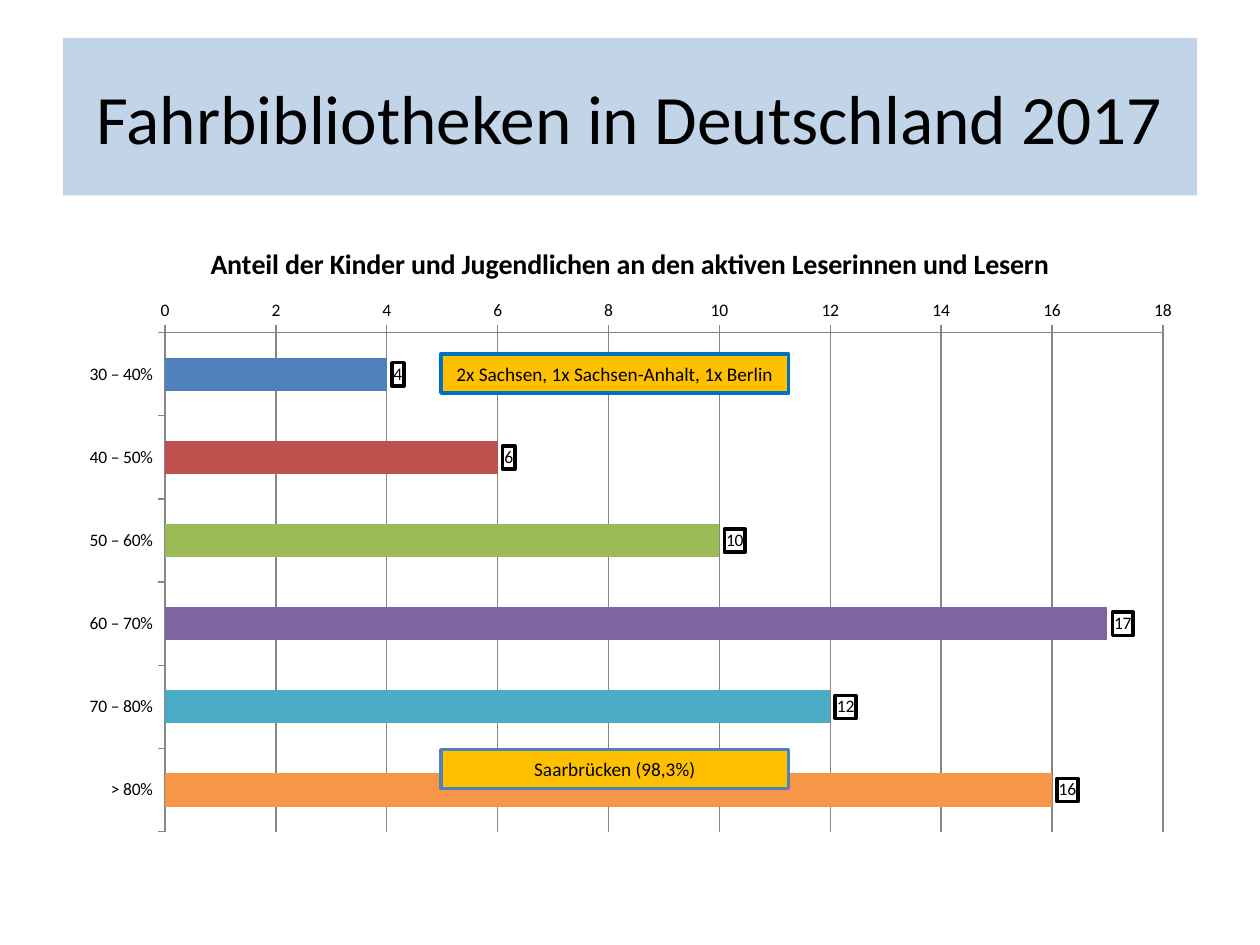
from lxml.etree import SubElement
from pptx import Presentation
from pptx.chart.data import CategoryChartData
from pptx.dml.color import RGBColor
from pptx.enum.chart import XL_CHART_TYPE, XL_LABEL_POSITION, XL_TICK_MARK
from pptx.enum.shapes import MSO_SHAPE
from pptx.enum.text import MSO_ANCHOR, PP_ALIGN
from pptx.oxml import parse_xml
from pptx.oxml.ns import nsdecls, qn
from pptx.util import Inches, Pt

COLORS = {
    "text": "000000",
    "banner": "4F81BD",
    "note": "FFC000",
    "note_line_top": "0070C0",
    "note_line_bottom": "4F81BD",
    "grid": "868686",
}
SHARES = {
    "30 – 40%": (4, "4F81BD"),
    "40 – 50%": (6, "C0504D"),
    "50 – 60%": (10, "9BBB59"),
    "60 – 70%": (17, "8064A2"),
    "70 – 80%": (12, "4BACC6"),
    "> 80%": (16, "F79646"),
}
NOTES = [
    (2.81, "2x Sachsen, 1x Sachsen-Anhalt, 1x Berlin", "note_line_top"),
    (5.95, "Saarbrücken (98,3%)", "note_line_bottom"),
]


def set_attributes(target, values):
    for name, value in values.items():
        setattr(target, name, value)


def style_font(font, size, bold=False):
    set_attributes(font, {"name": "Calibri", "size": Pt(size), "bold": bold})
    font.color.rgb = RGBColor.from_string(COLORS["text"])


def add_box(page, place, text, size, fill, line=None):
    box = page.shapes.add_shape(MSO_SHAPE.RECTANGLE, *map(Inches, place))
    box.shadow.inherit = False
    box.fill.solid()
    box.fill.fore_color.rgb = RGBColor.from_string(COLORS[fill])
    if line:
        box.line.color.rgb = RGBColor.from_string(COLORS[line])
        box.line.width = Pt(2)
    else:
        box.line.fill.background()
    set_attributes(box.text_frame, {
        "word_wrap": True, "vertical_anchor": MSO_ANCHOR.MIDDLE,
    })
    para = box.text_frame.paragraphs[0]
    para.alignment = PP_ALIGN.CENTER
    span = para.add_run()
    span.text = text
    style_font(span.font, size)
    return box


def set_opacity(box, percent):
    color = box.fill._xPr.find(qn("a:solidFill"))[0]
    SubElement(color, qn("a:alpha"), val=str(percent * 1000))


def place_plot(chart, **fractions):
    area = chart._chartSpace.chart.plotArea
    for old in area.findall(qn("c:layout")):
        area.remove(old)
    marks = "".join(f'<c:{name} val="{value}"/>' for name, value in fractions.items())
    area.insert(0, parse_xml(
        f'<c:layout {nsdecls("c")}><c:manualLayout><c:layoutTarget val="inner"/>'
        f'<c:xMode val="edge"/><c:yMode val="edge"/>{marks}'
        "</c:manualLayout></c:layout>"
    ))


def style_labels(plot):
    plot.has_data_labels = True
    labels = plot.data_labels
    style_font(labels.font, 10)
    set_attributes(labels, {
        "show_value": True, "position": XL_LABEL_POSITION.OUTSIDE_END,
    })
    frame = parse_xml(
        f'<c:spPr {nsdecls("c", "a")}><a:noFill/><a:ln w="{Pt(2)}"><a:solidFill>'
        f'<a:srgbClr val="{COLORS["text"]}"/></a:solidFill></a:ln></c:spPr>'
    )
    labels._element.find(qn("c:txPr")).addprevious(frame)


def style_axes(chart):
    set_attributes(chart.category_axis, {
        "reverse_order": True, "has_major_gridlines": False,
    })
    set_attributes(chart.value_axis, {
        "minimum_scale": 0, "maximum_scale": 18, "major_unit": 2,
        "has_major_gridlines": True,
    })
    for axis in (chart.category_axis, chart.value_axis):
        axis.major_tick_mark = XL_TICK_MARK.OUTSIDE
        style_font(axis.tick_labels.font, 10)
        axis.format.line.color.rgb = RGBColor.from_string(COLORS["grid"])
    grid = chart.value_axis.major_gridlines.format.line
    grid.color.rgb = RGBColor.from_string(COLORS["grid"])


def add_share_chart(page, place, title):
    data = CategoryChartData()
    data.categories = list(SHARES)
    data.add_series("Series 1", [value for value, _ in SHARES.values()])
    chart = page.shapes.add_chart(
        XL_CHART_TYPE.BAR_CLUSTERED, *map(Inches, place), data
    ).chart
    chart.has_legend = False
    style_font(chart.font, 10)
    span = chart.chart_title.text_frame.paragraphs[0].add_run()
    span.text = title
    style_font(span.font, 16, bold=True)
    style_axes(chart)
    plot = chart.plots[0]
    set_attributes(plot, {"gap_width": 150, "vary_by_categories": False})
    for index, (_, color) in enumerate(SHARES.values()):
        fill = plot.series[0].points[index].format.fill
        fill.solid()
        fill.fore_color.rgb = RGBColor.from_string(color)
    style_labels(plot)
    place_plot(chart, x=0.09, y=0.18, w=0.88, h=0.8)


def main():
    deck = Presentation()
    set_attributes(deck, {"slide_width": Inches(10), "slide_height": Inches(7.5)})
    page = deck.slides.add_slide(deck.slide_layouts[6])
    banner = add_box(
        page, (0.5, 0.3, 9, 1.25), "Fahrbibliotheken in Deutschland 2017", 39.6, "banner"
    )
    set_opacity(banner, 34)
    add_share_chart(
        page, (0.5, 1.75, 9, 4.95),
        "Anteil der Kinder und Jugendlichen an den aktiven Leserinnen und Lesern",
    )
    for top, text, line in NOTES:
        add_box(page, (3.5, top, 2.76, 0.31), text, 11, "note", line)
    deck.save("out.pptx")


if __name__ == "__main__":
    main()
